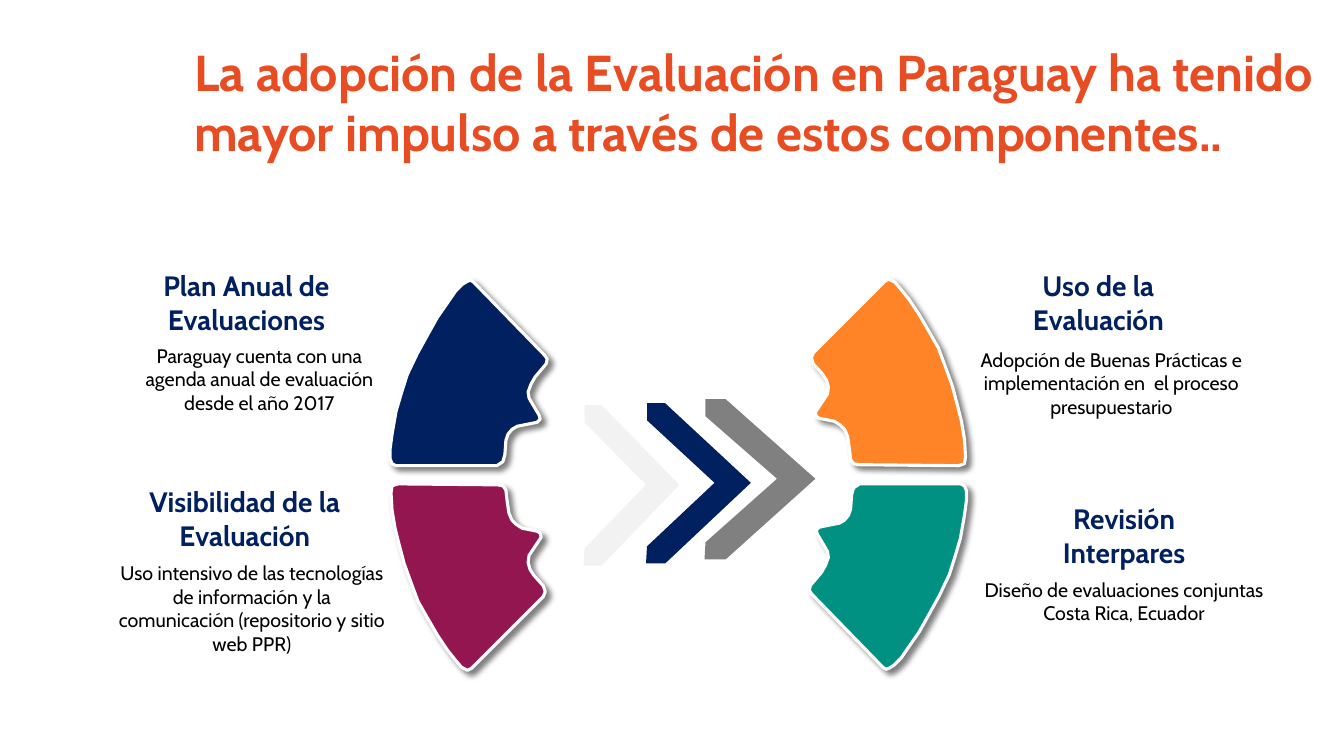
from lxml.etree import SubElement
from pptx import Presentation
from pptx.dml.color import RGBColor
from pptx.enum.text import MSO_ANCHOR, MSO_AUTO_SIZE, PP_ALIGN
from pptx.oxml.ns import qn
from pptx.util import Cm, Pt

COLORS = {
    "title": "E84C22", "navy": "002060", "black": "000000", "white": "FFFFFF",
    "orange": "FF8427", "teal": "009182", "purple": "941651",
    "light": "F2F2F2", "gray": "808080",
}
GRID = Cm(0.0254)

UPPER_RIGHT = [
    (882, 277), (888, 280), (894, 287), (902, 297), (912, 312), (923, 331),
    (931, 345), (937, 361), (945, 383), (950, 402), (954, 418), (957, 436),
    (958, 453), (957, 460), (951, 462), (852, 461), (847, 460), (844, 456),
    (843, 447), (841, 433), (838, 426), (834, 422), (828, 418), (813, 415),
    (810, 413), (809, 409), (821, 391), (822, 384), (820, 377), (816, 371),
    (807, 361), (805, 355), (807, 350), (878, 279),
]
LOWER_RIGHT = [
    (953, 480), (957, 482), (959, 487), (959, 496), (957, 511), (953, 534),
    (948, 551), (942, 570), (932, 591), (921, 611), (912, 627), (903, 640),
    (894, 653), (887, 660), (882, 663), (879, 664), (876, 662), (806, 590),
    (803, 586), (804, 581), (815, 568), (819, 561), (822, 553), (821, 547),
    (811, 530), (810, 526), (813, 523), (833, 519), (838, 516), (842, 511),
    (844, 505), (845, 491), (847, 484), (853, 480),
]


def turned(outline):
    return [(1346 - x, 942 - y) for x, y in outline]


class SlideBuilder:
    font_name = "Cabin"

    def __init__(self, presentation):
        self.slide = presentation.slides.add_slide(presentation.slide_layouts[6])

    def color(self, name):
        return RGBColor.from_string(COLORS[name])

    def text(self, box, lines, size, color, bold=False,
             anchor=MSO_ANCHOR.TOP, align=PP_ALIGN.CENTER,
             auto_size=MSO_AUTO_SIZE.SHAPE_TO_FIT_TEXT):
        shape = self.slide.shapes.add_textbox(*[Cm(length) for length in box])
        frame = shape.text_frame
        frame.word_wrap = True
        frame.auto_size = auto_size
        frame.vertical_anchor = anchor
        for index, line in enumerate(lines):
            paragraph = frame.add_paragraph() if index else frame.paragraphs[0]
            paragraph.alignment = align
            run = paragraph.add_run()
            run.text = line
            run.font.name = self.font_name
            run.font.size = Pt(size)
            run.font.bold = bold
            run.font.color.rgb = self.color(color)

    def title(self, box, line):
        self.text(box, [line], 36, "title", True, MSO_ANCHOR.MIDDLE,
                  PP_ALIGN.LEFT, MSO_AUTO_SIZE.NONE)

    def heading(self, box, lines):
        self.text(box, lines, 20, "navy", True, MSO_ANCHOR.BOTTOM)

    def body(self, box, lines):
        self.text(box, lines, 14, "black")

    def outline(self, points, color):
        builder = self.slide.shapes.build_freeform(*points[0], scale=GRID)
        builder.add_line_segments(points[1:], close=True)
        shape = builder.convert_to_shape()
        shape.shadow.inherit = False
        shape.fill.solid()
        shape.fill.fore_color.rgb = self.color(color)
        shape.line.fill.background()
        return shape

    def petal(self, points, color):
        shape = self.outline(points, color)
        shape.line.color.rgb = self.color("white")
        shape.line.width = Pt(2.25)
        effects = shape._element.spPr.find(qn("a:effectLst"))
        shadow = SubElement(effects, qn("a:outerShdw"), blurRad=str(Pt(4)),
                            dist=str(Pt(4)), dir="2700000", algn="tl", rotWithShape="0")
        tint = SubElement(shadow, qn("a:srgbClr"), val=COLORS["black"])
        SubElement(tint, qn("a:alpha"), val="50000")

    def chevron(self, left, top, shoulder, inner, tip, color):
        bottom = top + 159
        middle = top + 79
        self.outline([
            (left + 1, top), (shoulder, top), (tip, middle), (shoulder, bottom),
            (left, bottom), (left + 1, bottom - 17), (inner, middle),
            (left + 1, top + 17),
        ], color)


def main():
    presentation = Presentation()
    presentation.slide_width = Cm(33.87)
    presentation.slide_height = Cm(19.05)
    builder = SlideBuilder(presentation)

    builder.title((4.65, 1.42, 28.98, 2.26),
                  "La adopción de la Evaluación en Paraguay ha tenido mayor impulso "
                  "a través de estos componentes..")

    components = [
        ((2.64, 6.63, 7.14, 1.96), ["Plan Anual de Evaluaciones"],
         (2.97, 8.53, 7.14, 2.06),
         ["Paraguay cuenta con una agenda anual de evaluación desde el año 2017"]),
        ((2.51, 12.07, 7.32, 1.96), ["Visibilidad de la Evaluación"],
         (2.69, 14.02, 7.32, 2.06),
         ["Uso intensivo de las tecnologías de información y la comunicación "
          "(repositorio y sitio web PPR)"]),
        ((24.43, 6.63, 6.5, 1.96), ["Uso de la Evaluación"],
         (23.83, 8.64, 8.36, 2.06),
         ["Adopción de Buenas Prácticas e implementación en  el proceso presupuestario"]),
        ((24.56, 12.5, 7.54, 1.96), ["Revisión", "Interpares"],
         (24.56, 14.43, 7.54, 1.45),
         ["Diseño de evaluaciones conjuntas", "Costa Rica, Ecuador"]),
    ]
    for heading_box, heading, body_box, body in components:
        builder.heading(heading_box, heading)
        builder.body(body_box, body)

    builder.petal(UPPER_RIGHT, "orange")
    builder.petal(LOWER_RIGHT, "teal")
    builder.petal(turned(UPPER_RIGHT), "purple")
    builder.petal(turned(LOWER_RIGHT), "navy")

    builder.chevron(579, 402, 597, 641, 674, "light")
    builder.chevron(641, 400, 660, 709, 745, "navy")
    builder.chevron(699, 396, 720, 771, 809, "gray")

    presentation.save("out.pptx")


if __name__ == "__main__":
    main()
